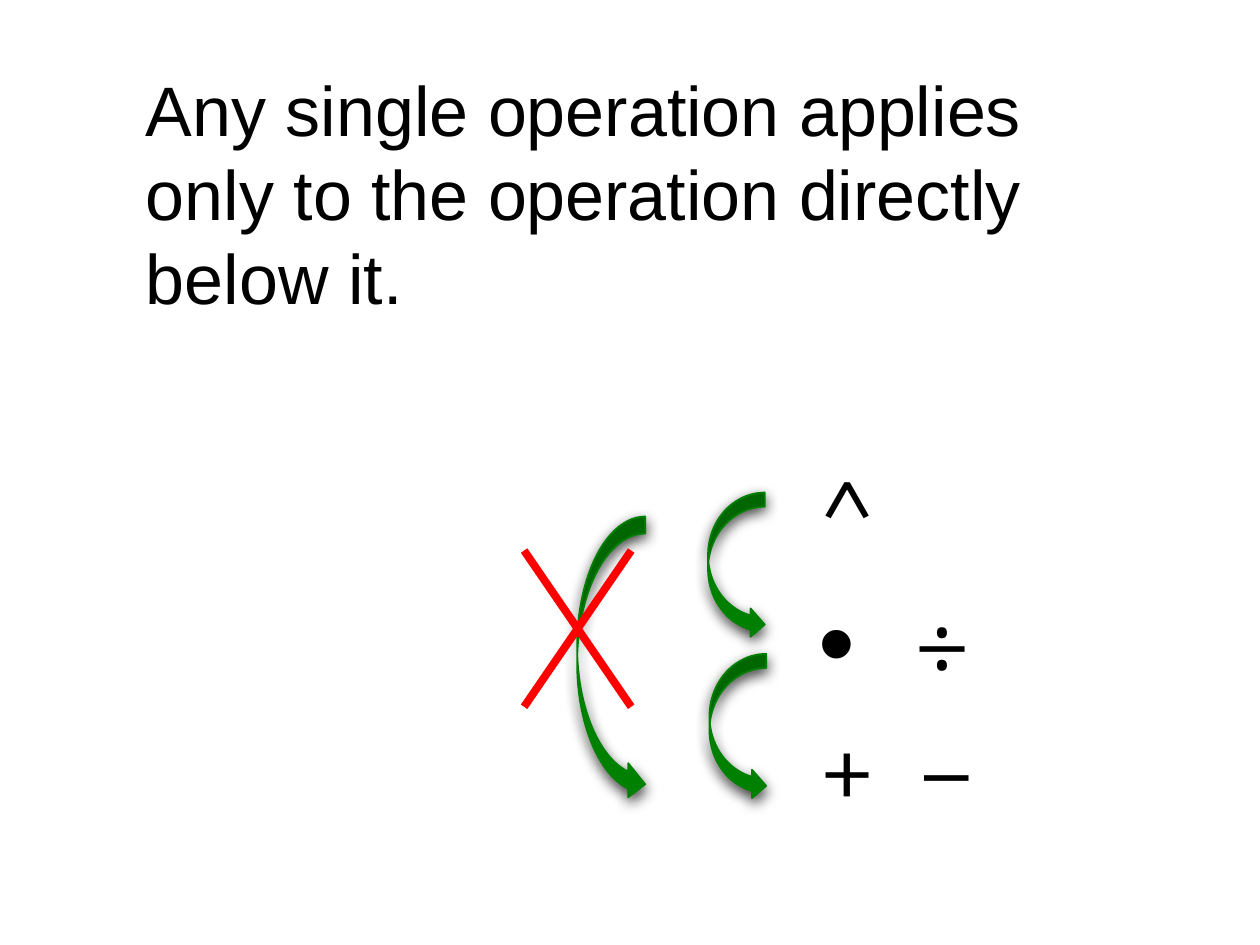
from lxml.etree import SubElement as Sub
from pptx import Presentation
from pptx.dml.color import RGBColor as RGB
from pptx.enum.shapes import MSO_CONNECTOR as Line, MSO_SHAPE as Shape
from pptx.enum.text import MSO_AUTO_SIZE as Fit
from pptx.oxml.ns import qn
from pptx.util import Pt

COLORS = {"text": "000000", "arrow": "008000", "cross": "FF0000", "shade": "000000"}
RULE = "Any single operation applies only to the operation directly below it."
# Each row: tab stop in points, then runs of (text, font)
ROWS = [
    (None, [("^", "Cambria")]),
    (54, [("•\t", "Arial"), ("÷", "Cambria")]),
    (58, [("+\t–", "Cambria")]),
]
ARROWS = [(404.6, 281.5, 32.4, 83.5), (329.8, 295.2, 38.9, 162.7), (405.4, 373.7, 32.4, 83.5)]
CROSS = (299.5, 314.6, 360.7, 403.9)


def color(name):
    return RGB.from_string(COLORS[name])


def add_box(slide, left, top, width, height):
    frame = slide.shapes.add_textbox(Pt(left), Pt(top), Pt(width), Pt(height)).text_frame
    frame.word_wrap = True
    frame.auto_size = Fit.SHAPE_TO_FIT_TEXT
    return frame


def style(font, size):
    font.size = Pt(size)
    font.color.rgb = color("text")


def add_rule(slide):
    para = add_box(slide, 76.3, 34.6, 524.9, 152.6).paragraphs[0]
    para.text = RULE
    para.font.name = "Arial"
    style(para.font, 40)


def add_tab(para, stop):
    tabs = Sub(para._p.get_or_add_pPr(), qn("a:tabLst"))
    Sub(tabs, qn("a:tab"), pos=str(Pt(stop)), algn="l")


def add_signs(slide):
    """Stack the operation signs, highest rank first."""
    frame = add_box(slide, 460.8, 252.7, 140.4, 225.4)
    for i, (stop, runs) in enumerate(ROWS):
        para = frame.add_paragraph() if i else frame.paragraphs[0]
        if stop:
            add_tab(para, stop)
        style(para.font, 60)
        for text, face in runs:
            run = para.add_run()
            run.text = text
            run.font.name = face
            style(run.font, 60)


def add_shade(shape):
    """Give the shape a soft shadow straight below it."""
    shape.shadow.inherit = False
    effects = shape._element.spPr.find(qn("a:effectLst"))
    outer = Sub(effects, qn("a:outerShdw"), blurRad=str(Pt(8)), dist=str(Pt(3)),
                dir="5400000", rotWithShape="0")
    tone = Sub(outer, qn("a:srgbClr"), val=COLORS["shade"])
    Sub(tone, qn("a:alpha"), val="75000")


def add_arrow(slide, left, top, width, height):
    arrow = slide.shapes.add_shape(
        Shape.CURVED_RIGHT_ARROW, Pt(left), Pt(top), Pt(width), Pt(height))
    arrow.fill.solid()
    arrow.fill.fore_color.rgb = color("arrow")
    arrow.line.color.rgb = color("arrow")
    arrow.line.width = Pt(1)
    add_shade(arrow)


def add_stroke(slide, *ends):
    stroke = slide.shapes.add_connector(Line.STRAIGHT, *map(Pt, ends))
    stroke.line.color.rgb = color("cross")
    stroke.line.width = Pt(4.5)
    Sub(stroke._element.spPr, qn("a:effectLst"))


def add_cross(slide, left, top, right, low):
    add_stroke(slide, left, top, right, low)
    add_stroke(slide, right, top, left, low)


def main():
    deck = Presentation()
    deck.slide_width, deck.slide_height = Pt(720), Pt(540)
    slide = deck.slides.add_slide(deck.slide_layouts[6])
    add_rule(slide)
    add_signs(slide)
    near, skip, last = ARROWS
    add_arrow(slide, *near)
    add_arrow(slide, *skip)
    add_cross(slide, *CROSS)
    add_arrow(slide, *last)
    deck.save("out.pptx")


if __name__ == "__main__":
    main()
